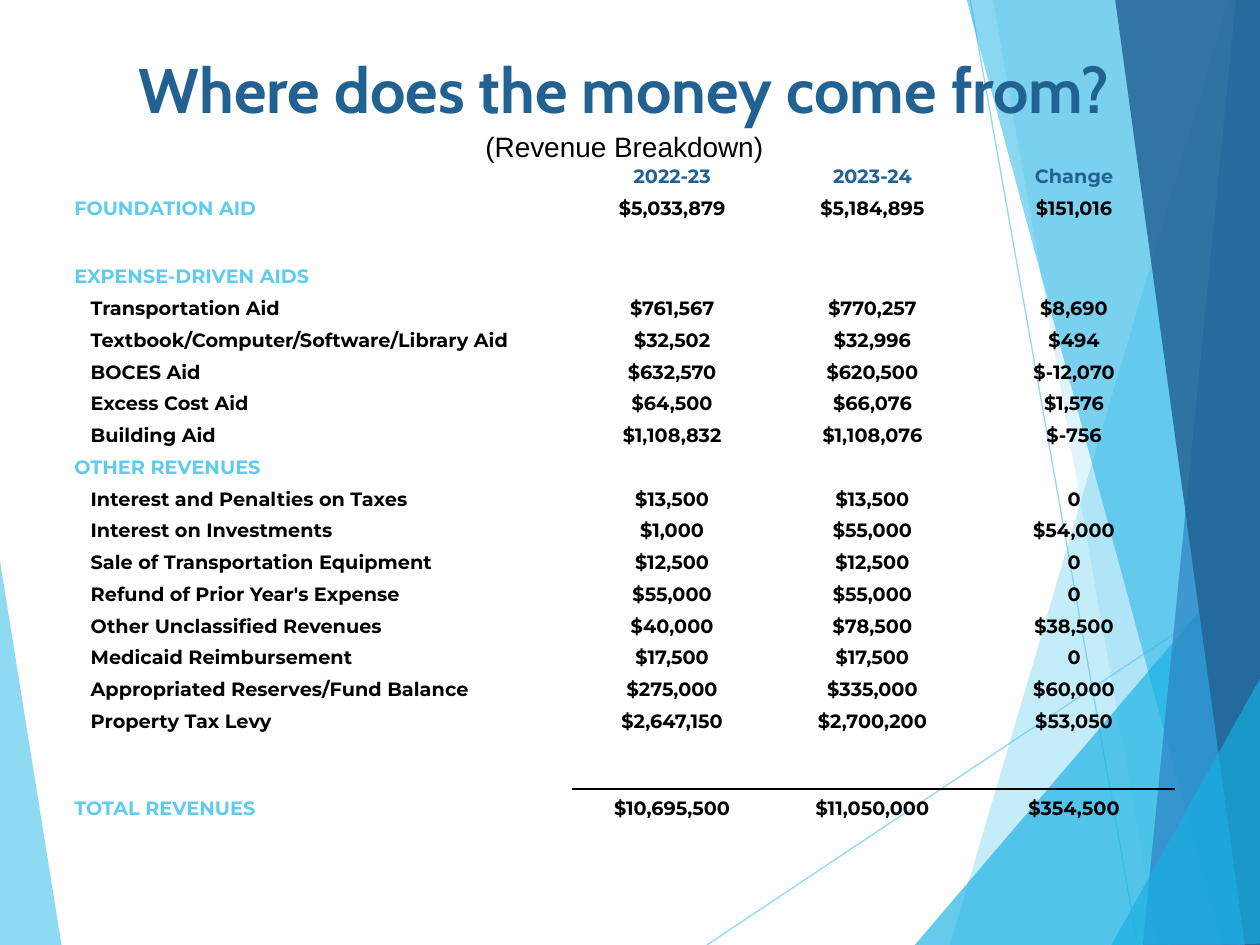
from lxml.etree import SubElement
from pptx import Presentation
from pptx.dml.color import RGBColor
from pptx.enum.shapes import MSO_CONNECTOR
from pptx.enum.text import MSO_ANCHOR, PP_ALIGN
from pptx.oxml import parse_xml
from pptx.oxml.ns import nsdecls, qn
from pptx.util import Inches, Pt

SKY = RGBColor(0x5F, 0xCB, 0xEF)
CYAN = RGBColor(0x17, 0xB0, 0xE4)
BLUE = RGBColor(0x2E, 0x83, 0xC3)
NAVY = RGBColor(0x22, 0x62, 0x92)
BLACK = RGBColor(0, 0, 0)

# Corner points, colour and opacity in percent, from back to front
FACETS = [
    ([(7.54, 7.5), (9.75, 0), (10.01, 0.01), (10.02, 7.51)], SKY, 36),
    ([(7.88, -0.01), (9.19, 7.5), (10.01, 7.5), (10.01, -0.01)], SKY, 20),
    ([(7.26, 7.5), (10, 4.29), (10.01, 7.5)], CYAN, 66),
    ([(7.67, -0.01), (9.7, 7.5), (10.01, 7.49), (10.01, -0.01)], CYAN, 50),
    ([(9.81, -0.01), (9.07, 7.5), (10.01, 7.5), (10, -0.01)], BLUE, 70),
    ([(8.85, -0.01), (9.88, 7.5), (10.02, 7.5), (10, -0.01)], NAVY, 82),
    ([(8.82, 7.5), (10.02, 5.35), (10.02, 7.49)], CYAN, 66),
]
LEFT_FACET = ([(-0.01, 4.39), (0.49, 7.51), (-0.01, 7.5)], SKY, 70)
RAYS = [((5.61, 7.5), (10.01, 4.57)), ((7.7, 0), (9.03, 7.5))]

HEADER = ["", "2022-23", "2023-24", "Change"]
BLANK = [""] * 4
REVENUES = [
    ["FOUNDATION AID", "$5,033,879", "$5,184,895", "$151,016"],
    BLANK,
    ["EXPENSE-DRIVEN AIDS", "", "", ""],
    ["Transportation Aid", "$761,567", "$770,257", "$8,690"],
    ["Textbook/Computer/Software/Library Aid", "$32,502", "$32,996", "$494"],
    ["BOCES Aid", "$632,570", "$620,500", "$-12,070"],
    ["Excess Cost Aid", "$64,500", "$66,076", "$1,576"],
    ["Building Aid", "$1,108,832", "$1,108,076", "$-756"],
    ["OTHER REVENUES", "", "", ""],
    ["Interest and Penalties on Taxes", "$13,500", "$13,500", "0"],
    ["Interest on Investments", "$1,000", "$55,000", "$54,000"],
    ["Sale of Transportation Equipment", "$12,500", "$12,500", "0"],
    ["Refund of Prior Year's Expense", "$55,000", "$55,000", "0"],
    ["Other Unclassified Revenues", "$40,000", "$78,500", "$38,500"],
    ["Medicaid Reimbursement", "$17,500", "$17,500", "0"],
    ["Appropriated Reserves/Fund Balance", "$275,000", "$335,000", "$60,000"],
    ["Property Tax Levy", "$2,647,150", "$2,700,200", "$53,050"],
    BLANK,
    BLANK,
    ["TOTAL REVENUES", "$10,695,500", "$11,050,000", "$354,500"],
]
TITLE = ["Where does the money come from?", "", "", ""]
SUBTITLE = ["(Revenue Breakdown)", "", "", ""]
ROWS = [BLANK, TITLE, SUBTITLE, HEADER] + REVENUES
TITLE_ROW, SUBTITLE_ROW, HEADER_ROW = 1, 2, 3
TOTAL_ROW = len(ROWS) - 1

COLUMN_WIDTHS = [3.96, 1.59, 1.59, 1.61]
ROW_HEIGHT = Inches(3.78) // 15
SPECIAL_HEIGHTS = {0: 0.14, 1: 0.61, 2: 0.27, 3: 0.2, 6: 0.29, TOTAL_ROW - 1: 0.19}


def set_opacity(shape_fill, percent):
    color = shape_fill._xPr.find(qn("a:solidFill"))[0]
    SubElement(color, qn("a:alpha"), val=str(percent * 1000))


def add_facet(page, points, color, opacity):
    corners = [(Inches(x), Inches(y)) for x, y in points]
    builder = page.shapes.build_freeform(*corners[0])
    builder.add_line_segments(corners[1:], close=True)
    facet = builder.convert_to_shape()
    facet.shadow.inherit = False
    facet.line.fill.background()
    facet.fill.solid()
    facet.fill.fore_color.rgb = color
    set_opacity(facet.fill, opacity)


deck = Presentation()
deck.slide_width = Inches(10)
deck.slide_height = Inches(7.5)
page = deck.slides.add_slide(deck.slide_layouts[6])

# Background facets and thin rays
add_facet(page, *LEFT_FACET)
for start, end in RAYS:
    ray = page.shapes.add_connector(
        MSO_CONNECTOR.STRAIGHT, *[Inches(value) for value in start + end])
    ray.line.width = Pt(0.75)
    ray.line.color.rgb = SKY
    set_opacity(ray.line.fill, 70)
    SubElement(ray._element.spPr, qn("a:effectLst"))
for points, color, opacity in FACETS:
    add_facet(page, points, color, opacity)

# Revenue table
table = page.shapes.add_table(
    len(ROWS), len(COLUMN_WIDTHS), Inches(0.58), Inches(0.27),
    Inches(8.75), Inches(6.23)).table
table.first_row = False
table.horz_banding = False
for column, width in zip(table.columns, COLUMN_WIDTHS):
    column.width = Inches(width)
for index, row in enumerate(table.rows):
    special = SPECIAL_HEIGHTS.get(index)
    row.height = Inches(special) if special else ROW_HEIGHT
for index in (TITLE_ROW, SUBTITLE_ROW):
    table.cell(index, 0).merge(table.cell(index, 3))

for row_index, texts in enumerate(ROWS):
    for column_index, text in enumerate(texts):
        cell = table.cell(row_index, column_index)
        cell.fill.background()
        cell.vertical_anchor = MSO_ANCHOR.BOTTOM
        cell.margin_left = cell.margin_right = cell.margin_top = Inches(0.01)
        cell.margin_bottom = 0
        para = cell.text_frame.paragraphs[0]
        if not text:
            SubElement(para._p, qn("a:endParaRPr"), sz="600")
            continue

        font_name, size, color, bold = "Montserrat", 11, BLACK, True
        if row_index == TITLE_ROW:
            font_name, size, color = "Cabin", 36, NAVY
        elif row_index == SUBTITLE_ROW:
            font_name, size, bold = "Arial", 16, False
        elif row_index == HEADER_ROW:
            color = NAVY
        elif column_index == 0 and text.isupper():
            color = SKY
        elif column_index == 0:
            cell.margin_left = Inches(0.14)

        if column_index > 0 or row_index <= HEADER_ROW:
            para.alignment = PP_ALIGN.CENTER
        span = para.add_run()
        span.text = text
        span.font.name = font_name
        span.font.size = Pt(size)
        span.font.bold = bold
        span.font.color.rgb = color

# Rule above the totals
for row_index, edge in ((TOTAL_ROW - 1, "lnB"), (TOTAL_ROW, "lnT")):
    for column_index in range(1, 4):
        properties = table.cell(row_index, column_index)._tc.get_or_add_tcPr()
        properties.insert(0, parse_xml(
            f'<a:{edge} {nsdecls("a")} w="{Pt(1)}"><a:solidFill>'
            f'<a:srgbClr val="{BLACK}"/></a:solidFill></a:{edge}>'))

# Plain style without grid lines
style = table._tbl.tblPr.find(qn("a:tableStyleId"))
style.text = "{2D5ABB26-0587-4C30-8999-92F81FD0307C}"

deck.save("out.pptx")
